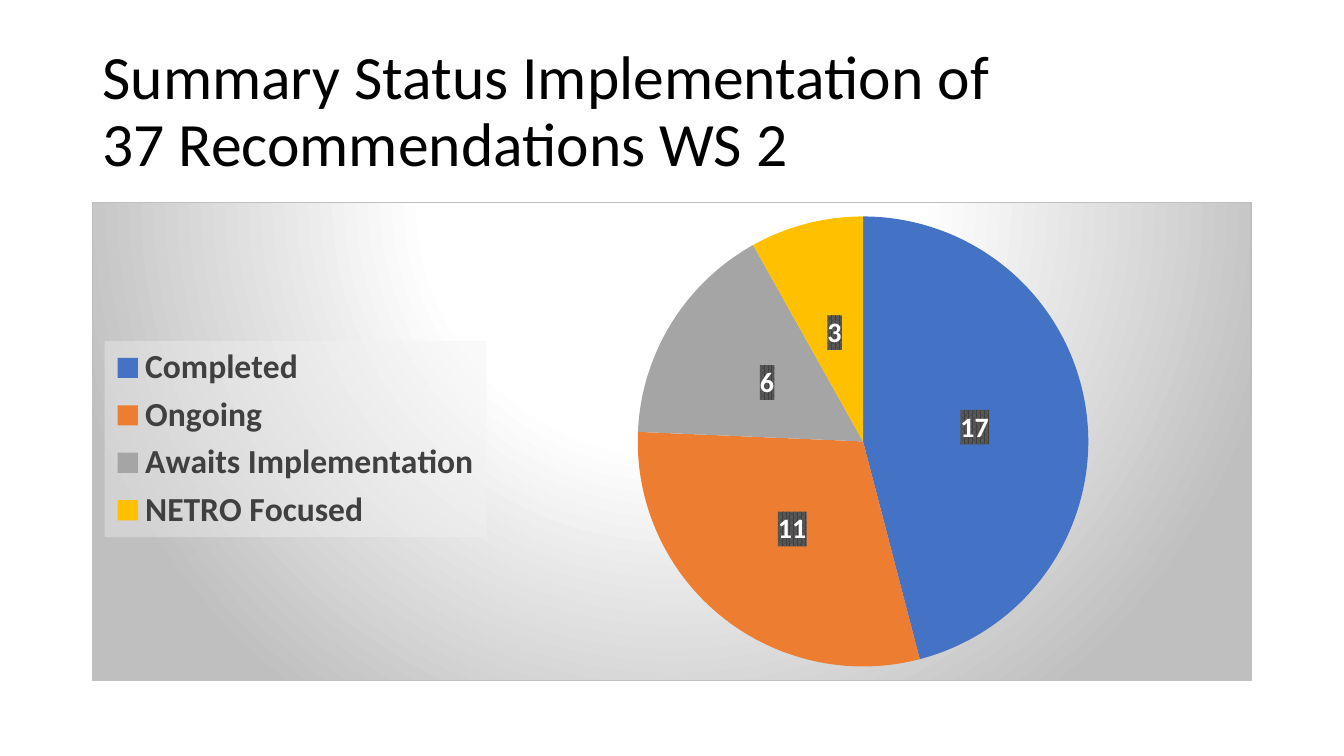
from lxml.etree import QName
from pptx import Presentation
from pptx.chart.data import CategoryChartData
from pptx.dml.color import RGBColor
from pptx.enum.chart import XL_CHART_TYPE, XL_LABEL_POSITION, XL_LEGEND_POSITION
from pptx.enum.text import MSO_ANCHOR, MSO_AUTO_SIZE, PP_ALIGN
from pptx.oxml import parse_xml
from pptx.oxml.ns import nsdecls
from pptx.util import Cm, Pt

FONT = "Calibri"
BLACK = RGBColor(0x00, 0x00, 0x00)
WHITE = RGBColor(0xFF, 0xFF, 0xFF)
CHARCOAL = RGBColor(0x40, 0x40, 0x40)
SLATE = RGBColor(0x59, 0x59, 0x59)
SILVER = RGBColor(0xBF, 0xBF, 0xBF)
PALE = RGBColor(0xF2, 0xF2, 0xF2)
BLUE = RGBColor(0x44, 0x72, 0xC4)
ORANGE = RGBColor(0xED, 0x7D, 0x31)
GRAY = RGBColor(0xA5, 0xA5, 0xA5)
GOLD = RGBColor(0xFF, 0xC0, 0x00)

STATUSES = [
    ("Completed", 17, BLUE),
    ("Ongoing", 11, ORANGE),
    ("Awaits Implementation", 6, GRAY),
    ("NETRO Focused", 3, GOLD),
]


def write_text(text_frame, text, size, color, align, anchor, line_spacing):
    text_frame.text = text
    text_frame.word_wrap = True
    text_frame.auto_size = MSO_AUTO_SIZE.NONE
    text_frame.vertical_anchor = anchor
    paragraph = text_frame.paragraphs[0]
    paragraph.alignment = align
    paragraph.line_spacing = line_spacing
    for run in paragraph.runs:
        run.font.name = FONT
        run.font.size = Pt(size)
        run.font.color.rgb = color


def manual_layout(x, y, width, height, target=""):
    return parse_xml(
        f'<c:layout {nsdecls("c")}><c:manualLayout>{target}'
        '<c:xMode val="edge"/><c:yMode val="edge"/>'
        f'<c:x val="{x}"/><c:y val="{y}"/><c:w val="{width}"/><c:h val="{height}"/>'
        '</c:manualLayout></c:layout>'
    )


presentation = Presentation()
presentation.slide_width = Cm(33.87)
presentation.slide_height = Cm(19.05)
slide = presentation.slides.add_slide(presentation.slide_layouts[5])

title = slide.shapes.title
title.left, title.top, title.width, title.height = Cm(2.33), Cm(1.01), Cm(29.21), Cm(3.68)
write_text(
    title.text_frame,
    "Summary Status Implementation of \v37 Recommendations WS 2",
    size=44,
    color=BLACK,
    align=PP_ALIGN.LEFT,
    anchor=MSO_ANCHOR.MIDDLE,
    line_spacing=0.9,
)

chart_data = CategoryChartData()
chart_data.categories = [name for name, count, color in STATUSES]
chart_data.add_series("Series 1", [count for name, count, color in STATUSES])
chart = slide.shapes.add_chart(
    XL_CHART_TYPE.PIE, Cm(2.33), Cm(5.08), Cm(29.21), Cm(12.09), chart_data
).chart
chart.has_title = False
chart.has_legend = True
legend = chart.legend
legend.position = XL_LEGEND_POSITION.LEFT
legend.include_in_layout = False

plot = chart.plots[0]
plot.vary_by_categories = True
series = plot.series[0]
for index, (name, count, color) in enumerate(STATUSES):
    fill = series.points[index].format.fill
    fill.solid()
    fill.fore_color.rgb = color

labels = series.data_labels
labels.show_value = True
labels.position = XL_LABEL_POSITION.CENTER

for font, size, color, bold in [
    (chart.font, 10, BLACK, False),
    (legend.font, 24, CHARCOAL, True),
    (labels.font, 20, WHITE, True),
]:
    font.name = FONT
    font.size = Pt(size)
    font.bold = bold
    font.color.rgb = color

BACKGROUND = (
    '<a:gradFill><a:gsLst>'
    f'<a:gs pos="0"><a:srgbClr val="{WHITE}"/></a:gs>'
    f'<a:gs pos="39000"><a:srgbClr val="{WHITE}"/></a:gs>'
    f'<a:gs pos="100000"><a:srgbClr val="{SILVER}"/></a:gs></a:gsLst>'
    '<a:path path="circle"><a:fillToRect l="50000" t="-80000" r="50000" b="180000"/></a:path>'
    f'</a:gradFill><a:ln w="9525"><a:solidFill><a:srgbClr val="{SILVER}"/></a:solidFill></a:ln>'
)
LEGEND_PANEL = (
    f'<a:solidFill><a:srgbClr val="{PALE}"><a:alpha val="39000"/></a:srgbClr></a:solidFill>'
    '<a:ln><a:noFill/></a:ln>'
)
LABEL_PANEL = (
    f'<a:pattFill prst="pct75"><a:fgClr><a:srgbClr val="{CHARCOAL}"/></a:fgClr>'
    f'<a:bgClr><a:srgbClr val="{SLATE}"/></a:bgClr></a:pattFill><a:ln><a:noFill/></a:ln>'
)
for owner, style in [
    ("c:chartSpace", BACKGROUND),
    ("c:legend", LEGEND_PANEL),
    ("c:dLbls", LABEL_PANEL),
]:
    text_properties = chart.element.xpath(f"descendant-or-self::{owner}/c:txPr")[0]
    text_properties.addprevious(
        parse_xml(f'<c:spPr {nsdecls("c", "a")}>{style}</c:spPr>')
    )

plot_area = chart.element.xpath(".//c:plotArea")[0]
legend_element = chart.element.xpath(".//c:legend")[0]
for parent in (plot_area, legend_element):
    for child in list(parent):
        if QName(child).localname == "layout":
            parent.remove(child)
plot_area.insert(
    0, manual_layout(0.47, 0.03, 0.39, 0.94, target='<c:layoutTarget val="inner"/>')
)
legend_element.insert(1, manual_layout(0.01, 0.29, 0.33, 0.41))

presentation.save("out.pptx")
